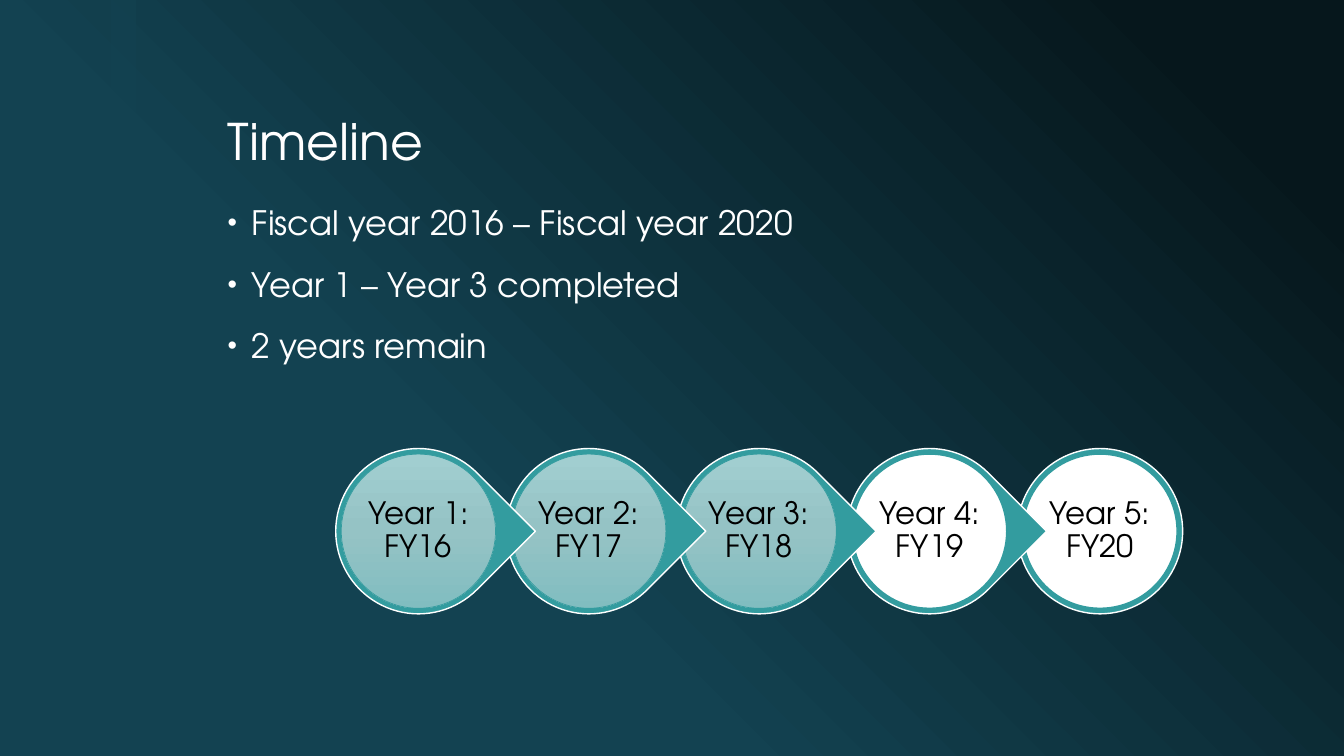
import pptx
import pptx.util
import pptx.dml.color
import pptx.enum.shapes
import pptx.enum.text
import pptx.oxml
import pptx.oxml.ns
from dataclasses import dataclass
from lxml import etree

HEAD = "Timeline"
POINTS = [
    "Fiscal year 2016 – Fiscal year 2020",
    "Year 1 – Year 3 completed",
    "2 years remain",
]
YEARS = [
    ("Year 1: FY16", True),
    ("Year 2: FY17", True),
    ("Year 3: FY18", True),
    ("Year 4: FY19", False),
    ("Year 5: FY20", False),
]


@dataclass(frozen=True)
class Theme:
    face: str = "TeX Gyre Adventor"
    white: str = "FFFFFF"
    black: str = "000000"
    deep: str = "134251"
    teal: str = "339C9F"
    night: tuple = ((10, "06171C"), (65, "134251"), (100, "134251"))
    done: tuple = ((0, "A1CED0"), (50, "95C3C5"), (100, "81BDC0"))
    head: int = 36
    body: int = 24
    label: int = 22


T = Theme()
Inches = pptx.util.Inches
Pt = pptx.util.Pt
KIND = pptx.enum.shapes.MSO_SHAPE
ALIGN = pptx.enum.text.PP_ALIGN
ANCHOR = pptx.enum.text.MSO_ANCHOR
qn = pptx.oxml.ns.qn

LEFT, TOP, STEP = 3.33, 4.45, 1.69
DROP, DISC = 1.64, 1.53
GAP = (DROP - DISC) / 2


def color(code):
    return pptx.dml.color.RGBColor.from_string(code)


def blend(fill, root, stops, angle):
    fill.gradient()
    fill.gradient_angle = angle
    marks = next(root.iter(qn("a:gsLst")))
    for old in list(marks):
        marks.remove(old)
    for place, code in stops:
        stop = etree.SubElement(marks, qn("a:gs"), pos=str(place * 1000))
        etree.SubElement(stop, qn("a:srgbClr"), val=code)


def style(para, size, code, align=ALIGN.LEFT):
    para.alignment = align
    para.line_spacing = 0.9
    for run in para.runs:
        run.font.name = T.face
        run.font.size = Pt(size)
        run.font.color.rgb = color(code)


def draw(slide, kind, left, top, wide, high, fill, line=None, width=1):
    shape = slide.shapes.add_shape(
        kind, Inches(left), Inches(top), Inches(wide), Inches(high))
    shape.shadow.inherit = False
    shape.fill.solid()
    shape.fill.fore_color.rgb = color(fill)
    if line:
        shape.line.color.rgb = color(line)
        shape.line.width = Pt(width)
    else:
        shape.line.fill.background()
    return shape


def add_head(slide):
    title = slide.shapes.title
    title.left, title.top = Inches(2.16), Inches(0.42)
    title.width, title.height = Inches(10), Inches(1.33)
    frame = title.text_frame
    frame.text = HEAD
    frame.vertical_anchor = ANCHOR.BOTTOM
    style(frame.paragraphs[0], T.head, T.white)


def add_points(slide):
    box = slide.shapes.add_textbox(
        Inches(2.16), Inches(2), Inches(10), Inches(4.83))
    frame = box.text_frame
    frame.word_wrap = True
    frame.text = "\n".join(POINTS)
    for spot, para in enumerate(frame.paragraphs):
        props = para._p.get_or_add_pPr()
        props.set("marL", str(Inches(0.24)))
        props.set("indent", str(-Inches(0.24)))
        etree.SubElement(props, qn("a:buSzPct"), val="80000")
        etree.SubElement(props, qn("a:buFont"), typeface="Arial")
        etree.SubElement(props, qn("a:buChar"), char="•")
        para.space_before = Pt(18 if spot else 0)
        style(para, T.body, T.white)


def add_year(slide, spot, label, done):
    left = LEFT + spot * STEP
    last = spot == len(YEARS) - 1
    kind = KIND.OVAL if last else KIND.TEAR
    drop = draw(slide, kind, left, TOP, DROP, DROP, T.teal, T.white)
    if not last:
        drop.adjustments[0] = 1
        drop.rotation = 45
    disc = draw(slide, KIND.OVAL, left + GAP, TOP + GAP, DISC, DISC,
                T.white, T.teal, 0.5 if done else 1)
    if done:
        blend(disc.fill, disc._element, T.done, 270)
    frame = disc.text_frame
    frame.word_wrap = True
    frame.vertical_anchor = ANCHOR.MIDDLE
    frame.margin_left = frame.margin_right = Inches(0.02)
    frame.margin_top = frame.margin_bottom = Inches(0.02)
    frame.text = label
    style(frame.paragraphs[0], T.label, T.black, ALIGN.CENTER)


def main():
    deck = pptx.Presentation()
    deck.slide_width, deck.slide_height = Inches(13.33), Inches(7.5)
    slide = deck.slides.add_slide(deck.slide_layouts[5])
    blend(slide.background.fill, slide._element, T.night, 225)
    strip = draw(slide, KIND.RECTANGLE, 1.1, 0, 0.25, 7.5, T.deep)
    tint = next(strip._element.spPr.iter(qn("a:srgbClr")))
    etree.SubElement(tint, qn("a:alpha"), val="60000")
    add_head(slide)
    add_points(slide)
    for spot, (label, done) in reversed(list(enumerate(YEARS))):
        add_year(slide, spot, label, done)
    deck.save("out.pptx")


if __name__ == "__main__":
    main()
